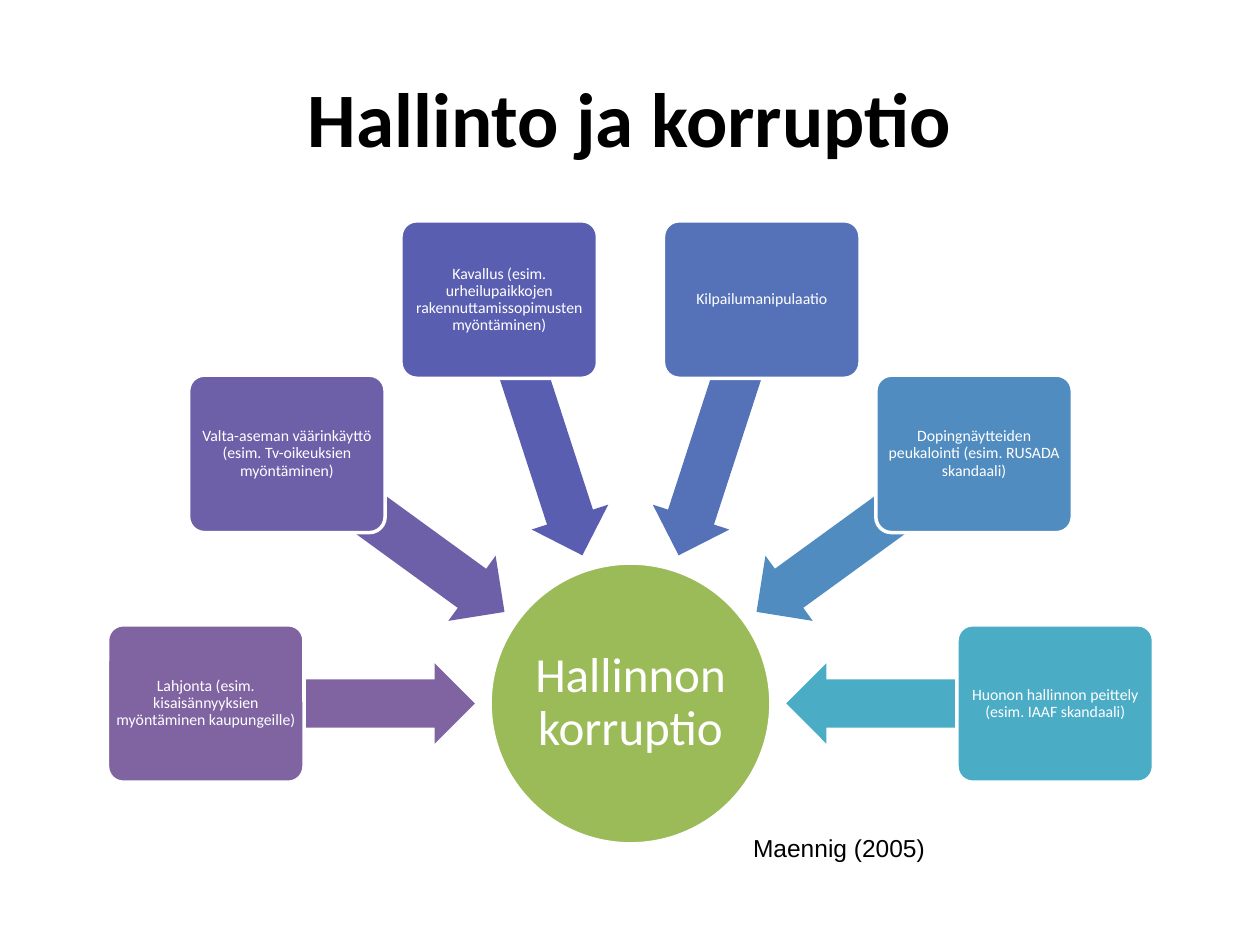
"""Build a radial slide on forms of administrative corruption."""
from dataclasses import dataclass
from math import cos, radians, sin

from pptx import Presentation
from pptx.dml.color import RGBColor
from pptx.enum.shapes import MSO_SHAPE
from pptx.enum.text import MSO_ANCHOR, PP_ALIGN
from pptx.util import Pt


@dataclass(frozen=True)
class Theme:
    font: str = "Calibri"
    caption_font: str = "Arial"
    dark: str = "000000"
    light: str = "FFFFFF"
    hub: str = "9BBB59"
    title_size: int = 44
    hub_size: int = 28
    card_size: int = 9
    caption_size: int = 14


THEME = Theme()
CENTER = (360.3, 402)
HUB_SIZE = (160.5, 160.5)
CARD_SIZE = (112.3, 90)
ARROW_SIZE = (154, 46)
CARD_RADIUS = 242.7
ARROW_RADIUS = 166
STEP = 36
CARDS = [
    ("Lahjonta (esim. kisaisännyyksien myöntäminen kaupungeille)", "8064A2"),
    ("Valta-aseman väärinkäyttö (esim. Tv-oikeuksien myöntäminen)", "6E5FA9"),
    ("Kavallus (esim. urheilupaikkojen rakennuttamissopimusten myöntäminen)", "5A5EB1"),
    ("Kilpailumanipulaatio", "5572B8"),
    ("Dopingnäytteiden peukalointi (esim. RUSADA skandaali)", "508CBF"),
    ("Huonon hallinnon peittely (esim. IAAF skandaali)", "4BACC6"),
]


def write_text(frame, text, size, color, font=THEME.font, bold=False, align=PP_ALIGN.CENTER):
    """Write one formatted paragraph into a text frame."""
    frame.word_wrap = True
    para = frame.paragraphs[0]
    para.alignment = align
    span = para.add_run()
    span.text = text
    span.font.name = font
    span.font.size = Pt(size)
    span.font.bold = bold
    span.font.color.rgb = RGBColor.from_string(color)
    return para


def point_on_circle(radius, angle):
    """Return the point at an angle, clockwise from the right, around the hub."""
    turn = radians(angle)
    return CENTER[0] + radius * cos(turn), CENTER[1] + radius * sin(turn)


def add_centered_shape(page, kind, center, size, fill):
    """Add a flat filled shape around a center point."""
    (x, y), (width, height) = center, size
    shape = page.shapes.add_shape(
        kind, Pt(x - width / 2), Pt(y - height / 2), Pt(width), Pt(height))
    shape.shadow.inherit = False
    shape.fill.solid()
    shape.fill.fore_color.rgb = RGBColor.from_string(fill)
    shape.line.fill.background()
    return shape


def add_label_shape(page, kind, center, size, fill, text, text_size):
    """Add a white-edged shape with a centered label."""
    shape = add_centered_shape(page, kind, center, size, fill)
    shape.line.color.rgb = RGBColor.from_string(THEME.light)
    shape.line.width = Pt(2)
    frame = shape.text_frame
    frame.vertical_anchor = MSO_ANCHOR.MIDDLE
    frame.margin_left = frame.margin_right = Pt(1.5)
    frame.margin_top = frame.margin_bottom = Pt(1.5)
    write_text(frame, text, text_size, THEME.light).line_spacing = 0.9
    return shape


def add_spoke(page, angle, text, fill):
    """Add a card and the arrow that leads from it to the hub."""
    arrow = add_centered_shape(
        page, MSO_SHAPE.LEFT_ARROW, point_on_circle(ARROW_RADIUS, angle), ARROW_SIZE, fill)
    arrow.adjustments[0] = 0.6
    arrow.adjustments[1] = 0.5
    arrow.rotation = angle % 360
    card = add_label_shape(
        page, MSO_SHAPE.ROUNDED_RECTANGLE, point_on_circle(CARD_RADIUS, angle),
        CARD_SIZE, fill, text, THEME.card_size)
    card.adjustments[0] = 0.1


def add_title(page, text):
    """Place and fill the title placeholder."""
    title = page.shapes.title
    title.left, title.top, title.width, title.height = Pt(36), Pt(21.6), Pt(648), Pt(90)
    title.text_frame.vertical_anchor = MSO_ANCHOR.MIDDLE
    write_text(title.text_frame, text, THEME.title_size, THEME.dark, bold=True)


def add_caption(page, text):
    """Add the right-aligned source caption."""
    box = page.shapes.add_textbox(Pt(386), Pt(472.3), Pt(149.7), Pt(24.5))
    write_text(box.text_frame, text, THEME.caption_size, THEME.dark,
               font=THEME.caption_font, align=PP_ALIGN.RIGHT)


def main():
    """Build and save the deck."""
    deck = Presentation()
    deck.slide_width, deck.slide_height = Pt(720), Pt(540)
    page = deck.slides.add_slide(deck.slide_layouts.get_by_name("Title Only"))
    add_title(page, "Hallinto ja korruptio")
    add_label_shape(page, MSO_SHAPE.OVAL, CENTER, HUB_SIZE, THEME.hub,
                    "Hallinnon korruptio", THEME.hub_size)
    for index, (text, fill) in enumerate(CARDS):
        add_spoke(page, 180 + STEP * index, text, fill)
    add_caption(page, "Maennig (2005)")
    deck.save("out.pptx")


if __name__ == "__main__":
    main()
